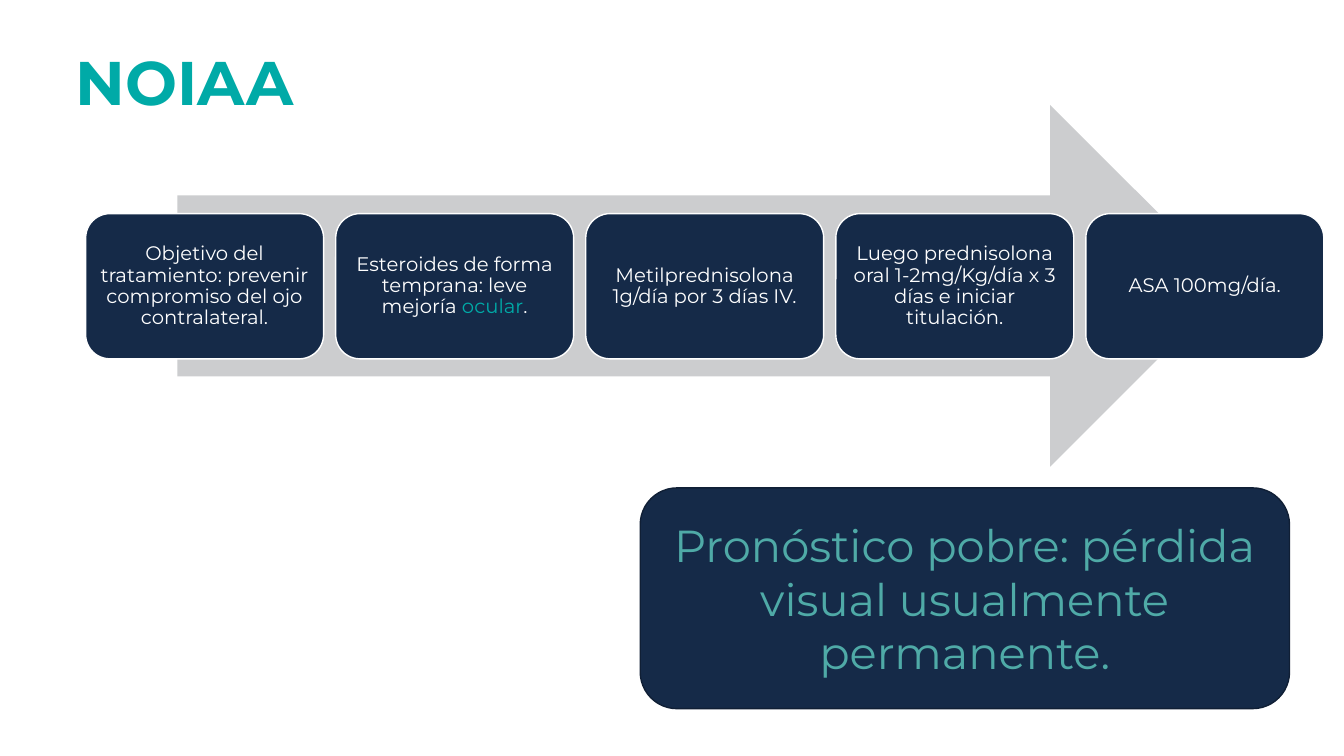
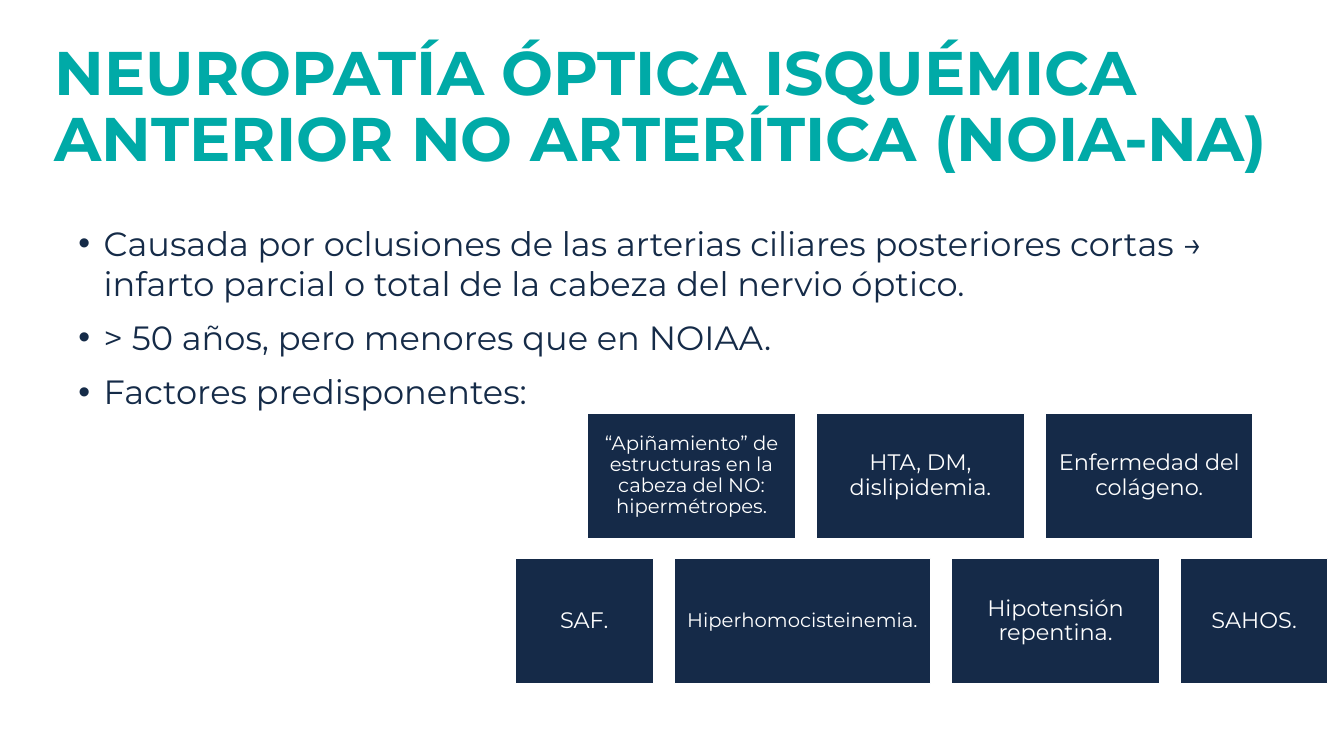
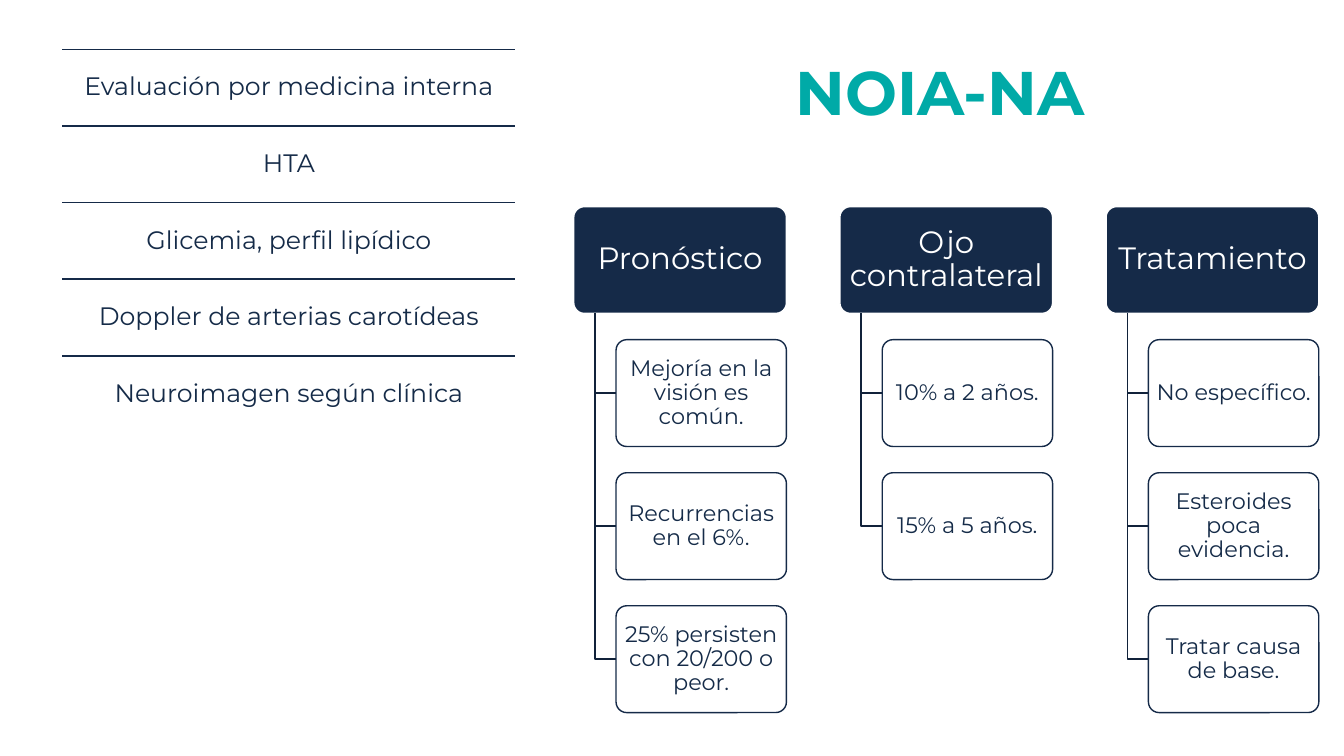
from lxml.etree import SubElement
from pptx import Presentation
from pptx.dml.color import RGBColor
from pptx.enum.shapes import MSO_CONNECTOR, MSO_SHAPE
from pptx.enum.text import MSO_ANCHOR, MSO_AUTO_SIZE, PP_ALIGN
from pptx.oxml.ns import qn
from pptx.util import Inches, Pt

FONT = "Montserrat"
COLORS = {
    "teal": "00AAA7",
    "soft_teal": "4FAAA7",
    "navy": "152A48",
    "ink": "152B48",
    "branch": "11223A",
    "edge": "101F35",
    "arrow": "CCCDCF",
    "white": "FFFFFF",
}


def rgb(name):
    """Return the palette colour called name."""
    return RGBColor.from_string(COLORS[name])


def style_runs(paragraph, size, color, bold=False):
    """Format every run of a paragraph."""
    for run in paragraph.runs:
        run.font.name = FONT
        run.font.size = Pt(size)
        run.font.bold = bold
        run.font.color.rgb = rgb(color)


def write(frame, text, size, color, align=PP_ALIGN.CENTER, spacing=0.9,
          margins=(0.1, 0.05), bold=False, accent=""):
    """Fill a frame with one paragraph, with an optional teal accent word."""
    frame.word_wrap = True
    frame.auto_size = MSO_AUTO_SIZE.NONE
    frame.vertical_anchor = MSO_ANCHOR.MIDDLE
    frame.margin_left = frame.margin_right = Inches(margins[0])
    frame.margin_top = frame.margin_bottom = Inches(margins[1])
    paragraph = frame.paragraphs[0]
    before, word, after = text.partition(accent) if accent else (text, "", "")
    paragraph.text = before
    for part in filter(None, (word, after)):
        paragraph.add_run().text = part
    paragraph.alignment = align
    paragraph.line_spacing = spacing
    style_runs(paragraph, size, color, bold)
    if accent:
        paragraph.runs[1].font.color.rgb = rgb("teal")


def add_titled_slide(deck, title, box, align=PP_ALIGN.LEFT):
    """Add a title-only slide with its title placed and styled."""
    slide = deck.slides.add_slide(deck.slide_layouts[5])
    heading = slide.shapes.title
    heading.left, heading.top, heading.width, heading.height = map(Inches, box)
    write(heading.text_frame, title, 44, "teal", align, bold=True)
    return slide


def paint(shape, fill, line):
    """Set the fill and outline of a shape; None leaves either out."""
    shape.shadow.inherit = False
    if fill:
        shape.fill.solid()
        shape.fill.fore_color.rgb = rgb(fill)
    else:
        shape.fill.background()
    if line:
        shape.line.color.rgb = rgb(line)
        shape.line.width = Pt(1)
    else:
        shape.line.fill.background()


def add_block(slide, preset, box, fill="navy", line="white", corner=None):
    """Add a painted preset shape."""
    block = slide.shapes.add_shape(preset, *map(Inches, box))
    paint(block, fill, line)
    if corner is not None:
        block.adjustments[0] = corner
    return block


def add_rule(slide, left, top, width):
    """Add a horizontal navy line."""
    rule = slide.shapes.add_connector(
        MSO_CONNECTOR.STRAIGHT, Inches(left), Inches(top), Inches(left + width), Inches(top))
    rule.line.color.rgb = rgb("navy")
    rule.line.width = Pt(1)
    SubElement(rule._element.spPr, qn("a:effectLst"))


def add_branch(slide, left, top, right, bottom):
    """Add an open elbow that goes down and then right."""
    outline = slide.shapes.build_freeform(Inches(left), Inches(top))
    corners = [(left, bottom), (right, bottom)]
    outline.add_line_segments([(Inches(x), Inches(y)) for x, y in corners], close=False)
    paint(outline.convert_to_shape(), None, "branch")


def add_bullets(slide, box, items):
    """Add a bulleted text box."""
    frame = slide.shapes.add_textbox(*map(Inches, box)).text_frame
    frame.word_wrap = True
    frame.vertical_anchor = MSO_ANCHOR.MIDDLE
    frame.text = "\n".join(items)
    for index, paragraph in enumerate(frame.paragraphs):
        properties = paragraph._p.get_or_add_pPr()
        properties.set("marL", str(Inches(0.25)))
        properties.set("indent", str(Inches(-0.25)))
        SubElement(properties, qn("a:buFont")).set("typeface", "Arial")
        SubElement(properties, qn("a:buChar")).set("char", "•")
        paragraph.space_before = Pt(10 if index else 0)
        style_runs(paragraph, 24, "ink")


def add_factor_row(slide, left, top, factors):
    """Add a row of equally spaced boxes, each given as text, width and size."""
    for text, width, size in factors:
        factor = add_block(slide, MSO_SHAPE.RECTANGLE, (left, top, width, 1.24))
        write(factor.text_frame, text, size, "white", margins=(0.06, 0.06))
        left += width + 0.21


def add_ruled_list(slide, left, top, width, pitch, items):
    """Add centred rows, each under a line."""
    for index, text in enumerate(items):
        row_top = top + index * pitch
        add_rule(slide, left, row_top, width)
        row = slide.shapes.add_textbox(*map(Inches, (left, row_top, width, pitch)))
        write(row.text_frame, text, 18, "ink", margins=(0.07, 0.07))


def add_hierarchy(slide, left, top, heading, details):
    """Add a heading box with details hanging from it on elbows."""
    height, pitch, indent = 1.06, 1.32, 0.42
    head = add_block(slide, MSO_SHAPE.ROUNDED_RECTANGLE, (left, top, 2.11, height), corner=0.1)
    write(head.text_frame, heading, 22, "white", margins=(0.05, 0.03))
    for index, text in enumerate(details, 1):
        detail_top = top + index * pitch
        add_branch(slide, left + indent / 2, top + height, left + indent, detail_top + height / 2)
        detail = add_block(slide, MSO_SHAPE.ROUNDED_RECTANGLE,
                           (left + indent, detail_top, 1.69, height), "white", "navy", 0.1)
        tint = detail._element.spPr.find(qn("a:solidFill"))[0]
        SubElement(tint, qn("a:alpha")).set("val", "90000")
        write(detail.text_frame, text, 16, "ink", margins=(0.03, 0.02))


def build_arteritic(deck):
    """Build the NOIAA treatment slide."""
    slide = add_titled_slide(deck, "NOIAA", (0.65, 0.2, 7.81, 1.3))
    add_block(slide, MSO_SHAPE.RIGHT_ARROW, (1.76, 1.04, 10.45, 3.59), "arrow", None)
    steps = [
        ("Objetivo del tratamiento: prevenir compromiso del ojo contralateral.", ""),
        ("Esteroides de forma temprana: leve mejoría ocular.", "ocular"),
        ("Metilprednisolona 1g/día por 3 días IV.", ""),
        ("Luego prednisolona oral 1-2mg/Kg/día x 3 días e iniciar titulación.", ""),
        ("ASA 100mg/día.", ""),
    ]
    for index, (text, accent) in enumerate(steps):
        step = add_block(slide, MSO_SHAPE.ROUNDED_RECTANGLE,
                         (0.85 + index * 2.48, 2.12, 2.36, 1.44))
        write(step.text_frame, text, 14, "white", margins=(0.06, 0.06), accent=accent)
    prognosis = add_block(slide, MSO_SHAPE.ROUNDED_RECTANGLE, (6.35, 4.84, 6.44, 2.19), line="edge")
    write(prognosis.text_frame, "Pronóstico pobre: pérdida visual usualmente permanente.",
          32, "soft_teal", spacing=1.0)


def build_causes(deck):
    """Build the NOIA-NA causes slide."""
    slide = add_titled_slide(
        deck, "NEUROPATÍA ÓPTICA ISQUÉMICA ANTERIOR NO ARTERÍTICA (NOIA-NA)",
        (0.44, 0.19, 12.93, 1.77))
    add_bullets(slide, (0.68, 2.12, 12.32, 2.05), [
        "Causada por oclusiones de las arterias ciliares posteriores cortas → "
        "infarto parcial o total de la cabeza del nervio óptico.",
        "> 50 años, pero menores que en NOIAA.",
        "Factores predisponentes:",
    ])
    add_factor_row(slide, 5.83, 4.1, [
        ("“Apiñamiento” de estructuras en la cabeza del NO: hipermétropes.", 2.06, 14),
        ("HTA, DM, dislipidemia.", 2.06, 16),
        ("Enfermedad del colágeno.", 2.06, 16),
    ])
    add_factor_row(slide, 5.11, 5.54, [
        ("SAF.", 1.37, 16),
        ("Hiperhomocisteinemia.", 2.54, 14),
        ("Hipotensión repentina.", 2.06, 16),
        ("SAHOS.", 1.46, 16),
    ])


def build_management(deck):
    """Build the NOIA-NA work-up and prognosis slide."""
    slide = add_titled_slide(deck, "NOIA-NA", (6.67, 0.26, 5.31, 1.38), PP_ALIGN.CENTER)
    add_ruled_list(slide, 0.62, 0.49, 4.49, 0.76, [
        "Evaluación por medicina interna",
        "HTA",
        "Glicemia, perfil lipídico",
        "Doppler de arterias carotídeas",
        "Neuroimagen según clínica",
    ])
    branches = {
        "Pronóstico": ["Mejoría en la visión es común.", "Recurrencias en el 6%.",
                       "25% persisten con 20/200 o peor."],
        "Ojo contralateral": ["10% a 2 años.", "15% a 5 años."],
        "Tratamiento": ["No específico.", "Esteroides poca evidencia.", "Tratar causa de base."],
    }
    for index, (heading, details) in enumerate(branches.items()):
        add_hierarchy(slide, 5.69 + index * 2.64, 2.05, heading, details)


def main():
    """Build and save the deck."""
    deck = Presentation()
    deck.slide_width, deck.slide_height = Inches(13.33), Inches(7.5)
    build_arteritic(deck)
    build_causes(deck)
    build_management(deck)
    deck.save("out.pptx")


if __name__ == "__main__":
    main()
